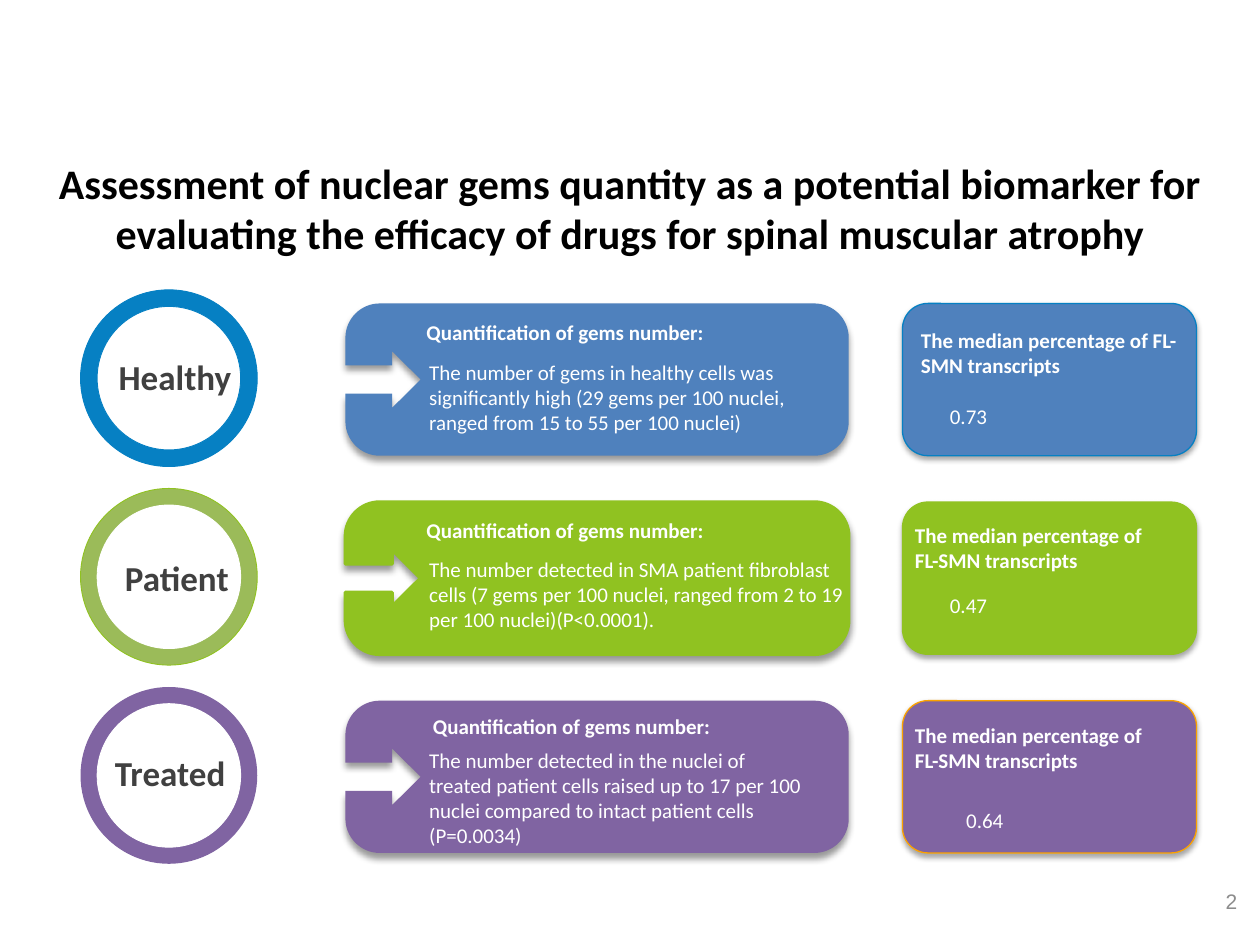
from dataclasses import dataclass

from lxml.etree import Element, SubElement
from pptx import Presentation
from pptx.dml.color import RGBColor
from pptx.enum.shapes import MSO_SHAPE
from pptx.enum.text import MSO_ANCHOR, MSO_AUTO_SIZE, PP_ALIGN
from pptx.oxml.ns import qn
from pptx.util import Pt


@dataclass(frozen=True)
class Theme:
    font: str = "Calibri"
    number_font: str = "Arial"
    title_size: int = 24
    label_size: int = 20
    body_size: int = 12
    black: str = "000000"
    white: str = "FFFFFF"
    label: str = "404040"
    number: str = "8C8C8C"
    blue: str = "4F81BD"
    ring_blue: str = "0680C3"
    green: str = "90C221"
    ring_green: str = "9BBB59"
    purple: str = "8064A2"
    orange: str = "FBA200"


@dataclass(frozen=True)
class Group:
    """One row; each position is (left, top, width) in points."""
    name: str
    fill: str
    ring: str
    ring_line: str
    hole_line: str
    card_line: str
    heading_fill: str
    panel_line: str
    finding: str
    median: str
    name_at: tuple
    heading_at: tuple
    finding_at: tuple
    panel_at: tuple
    median_at: tuple


T = Theme()
ROW_TOP, ROW_PITCH = 173.4, 113.5
CARD_LEFT, CARD_WIDTH, CARD_HEIGHT, CARD_RADIUS = 197.4, 287.6, 87, 19.6
PANEL_LEFT, PANEL_WIDTH = 515.7, 168
RING_LEFT, RING_SIZE, RING_BAND = 46, 101, 9.5
CARD_SHADOW = (40, 4, 3)
PANEL_SHADOW = (35, 3.1, 1.8)

GROUPS = [
    Group("Healthy", T.blue, T.ring_blue, T.ring_blue, T.ring_blue, None, None, T.ring_blue,
          "The number of gems in healthy cells was significantly high "
          "(29 gems per 100 nuclei, ranged from 15 to 55 per 100 nuclei)", "0.73",
          (59, 199.5, 82), (236.6, 179.1, 217), (238.2, 201.9, 248),
          (519.2, 183.8, 160.5), (535.7, 227, 217)),
    Group("Patient", T.green, T.ring_green, T.green, T.white, T.green, T.green, T.green,
          "The number detected in SMA patient fibroblast cells (7 gems per 100 nuclei, "
          "ranged from 2 to 19 per 100 nuclei)(P<0.0001).", "0.47",
          (60, 314.6, 82), (236.6, 291.8, 217), (238.2, 314.2, 253),
          (515.7, 295.1, 154), (535.7, 335, 217)),
    Group("Treated", T.purple, T.purple, None, T.white, None, None, T.orange,
          "The number detected in the nuclei of treated patient cells raised up to "
          "17 per 100 nuclei compared to intact patient cells (P=0.0034)", "0.64",
          (56.2, 425.6, 82), (240.3, 404, 217), (238.2, 423.5, 233),
          (515.7, 409.5, 154), (545, 458, 217)),
]


def write(tf, text, size, color, bold=False, align=PP_ALIGN.LEFT, font=T.font):
    tf.word_wrap = True
    p = tf.paragraphs[0]
    p.alignment = align
    r = p.add_run()
    r.text = text
    r.font.name, r.font.size, r.font.bold = font, Pt(size), bold
    r.font.color.rgb = RGBColor.from_string(color)


def add_text(slide, at, height, text, size=T.body_size, color=T.white, fill=None, **style):
    left, top, width = at
    box = Pt(left), Pt(top), Pt(width), Pt(height)
    if fill:
        sp = slide.shapes.add_shape(MSO_SHAPE.RECTANGLE, *box)
        paint(sp, fill, fill)
    else:
        sp = slide.shapes.add_textbox(*box)
    write(sp.text_frame, text, size, color, **style)
    return sp


def paint(sp, fill, line=None, line_width=0.75, shadow=None):
    """Shadow is opacity in percent, blur and distance in points, cast downwards."""
    sp.fill.solid()
    sp.fill.fore_color.rgb = RGBColor.from_string(fill)
    if line:
        sp.line.color.rgb = RGBColor.from_string(line)
        sp.line.width = Pt(line_width)
    else:
        sp.line.fill.background()
    sp.shadow.inherit = False
    if shadow:
        opacity, blur, distance = shadow
        effects = sp._element.spPr.find(qn("a:effectLst"))
        outer = SubElement(effects, qn("a:outerShdw"), blurRad=str(Pt(blur)),
                           dist=str(Pt(distance)), dir="5400000", rotWithShape="0")
        color = SubElement(outer, qn("a:srgbClr"), val=T.black)
        SubElement(color, qn("a:alpha"), val=str(opacity * 1000))


def add_title(slide, text):
    sp = slide.shapes.title
    sp.left, sp.top, sp.width, sp.height = Pt(6), Pt(86.2), Pt(708), Pt(65.5)
    sp.text_frame.auto_size = MSO_AUTO_SIZE.NONE
    sp.text_frame.vertical_anchor = MSO_ANCHOR.TOP
    write(sp.text_frame, text, T.title_size, T.black, bold=True, align=PP_ALIGN.CENTER)


def add_ring(slide, top, group):
    circles = [(0, group.ring, group.ring_line), (RING_BAND, T.white, group.hole_line)]
    for inset, fill, line in circles:
        size = Pt(RING_SIZE - 2 * inset)
        sp = slide.shapes.add_shape(MSO_SHAPE.OVAL, Pt(RING_LEFT + inset),
                                    Pt(top + inset), size, size)
        paint(sp, fill, line, 0.5)


def round_corners(sp, corners):
    """Turn the numbered line segments into quarter circles.

    Each corner is (segment, True if it leaves horizontally).
    """
    lines = sp._element.spPr.findall(".//" + qn("a:lnTo"))
    ends = [(int(line[0].get("x")), int(line[0].get("y"))) for line in lines]
    for segment, horizontal in corners:
        (x0, y0), (x1, y1) = ends[segment - 1], ends[segment]
        cx, cy = (x1, y0) if horizontal else (x0, y1)
        curve = Element(qn("a:cubicBezTo"))
        controls = [(x + 0.55 * (cx - x), y + 0.55 * (cy - y))
                    for x, y in ((x0, y0), (x1, y1))]
        for x, y in controls + [(x1, y1)]:
            SubElement(curve, qn("a:pt"), x=str(round(x)), y=str(round(y)))
        lines[segment].getparent().replace(lines[segment], curve)


def add_notched_card(slide, top, group):
    """Rounded card with an arrow cut into its left side."""
    left, right, bottom = CARD_LEFT, CARD_LEFT + CARD_WIDTH, top + CARD_HEIGHT
    x1, x2 = left + CARD_RADIUS, right - CARD_RADIUS
    y1, y2 = top + CARD_RADIUS, bottom - CARD_RADIUS
    middle = top + CARD_HEIGHT / 2
    neck, tip, shaft, head = left + 26.7, left + 43, 8.1, 16.2
    arrow = [(left, middle + shaft), (neck, middle + shaft), (neck, middle + head),
             (tip, middle),
             (neck, middle - head), (neck, middle - shaft), (left, middle - shaft)]
    outline = [(x1, top), (x2, top), (right, y1), (right, y2), (x2, bottom),
               (x1, bottom), (left, y2), *arrow, (left, y1), (x1, top)]
    points = [(Pt(x), Pt(y)) for x, y in outline]
    builder = slide.shapes.build_freeform(*points[0])
    builder.add_line_segments(points[1:], close=True)
    sp = builder.convert_to_shape()
    round_corners(sp, [(1, True), (3, False), (5, True), (14, False)])
    paint(sp, group.fill, group.card_line, 2, CARD_SHADOW)


def add_panel(slide, top, group):
    sp = slide.shapes.add_shape(MSO_SHAPE.ROUNDED_RECTANGLE, Pt(PANEL_LEFT), Pt(top),
                                Pt(PANEL_WIDTH), Pt(CARD_HEIGHT))
    paint(sp, group.fill, group.panel_line, shadow=PANEL_SHADOW)


def add_group(slide, top, group):
    add_ring(slide, top + (CARD_HEIGHT - RING_SIZE) / 2 - 0.8, group)
    add_text(slide, group.name_at, 31.5, group.name, T.label_size, T.label,
             bold=True, align=PP_ALIGN.CENTER)
    add_notched_card(slide, top, group)
    add_text(slide, group.heading_at, 21.8, "Quantification of gems number:",
             fill=group.heading_fill, bold=True)
    add_text(slide, group.finding_at, 51, group.finding)
    add_panel(slide, top, group)
    add_text(slide, group.panel_at, 36, "The median percentage of FL-SMN transcripts",
             bold=True)
    add_text(slide, group.median_at, 21.8, group.median)


def main():
    prs = Presentation()
    prs.slide_width, prs.slide_height = Pt(720), Pt(540)
    slide = prs.slides.add_slide(prs.slide_layouts[5])
    add_title(slide, "Assessment of nuclear gems quantity as a potential biomarker for "
                     "evaluating the efficacy of drugs for spinal muscular atrophy")
    for i, group in enumerate(GROUPS):
        add_group(slide, ROW_TOP + i * ROW_PITCH, group)
    number = add_text(slide, (546, 500.5, 168), 28.8, "2", color=T.number,
                      align=PP_ALIGN.RIGHT, font=T.number_font)
    number.text_frame.vertical_anchor = MSO_ANCHOR.MIDDLE
    prs.save("out.pptx")


if __name__ == "__main__":
    main()
